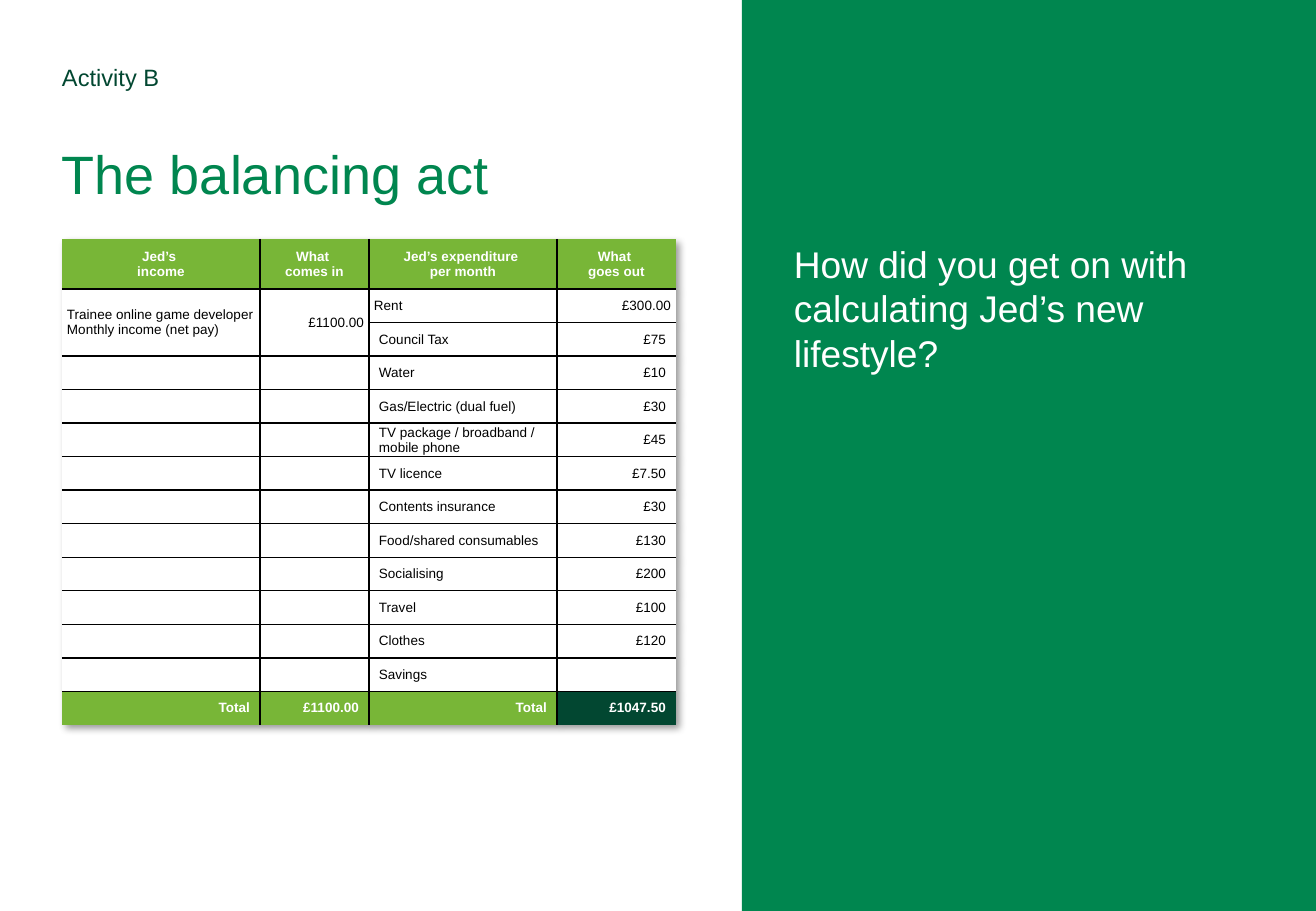
from dataclasses import dataclass
from lxml.etree import SubElement
from pptx import Presentation
from pptx.dml.color import RGBColor
from pptx.enum.shapes import MSO_SHAPE
from pptx.enum.text import MSO_ANCHOR, PP_ALIGN
from pptx.oxml import parse_xml
from pptx.oxml.ns import qn
from pptx.util import Pt

LABEL, TITLE = "Activity B", "The balancing act"
ASK = "How did you get on with calculating Jed’s new lifestyle?"
HEAD = ("Jed’s \vincome", "What \vcomes in",
        "Jed’s expenditure \vper month", "What \vgoes out")
INCOME = ("Trainee online game developer\nMonthly income (net pay)", "£1100.00")
COSTS = [
    ("Rent", "£300.00"),
    ("Council Tax", "£75"),
    ("Water", "£10"),
    ("Gas/Electric (dual fuel)", "£30"),
    ("TV package / broadband / mobile phone", "£45"),
    ("TV licence", "£7.50"),
    ("Contents insurance", "£30"),
    ("Food/shared consumables", "£130"),
    ("Socialising", "£200"),
    ("Travel", "£100"),
    ("Clothes", "£120"),
    ("Savings", ""),
]
TOTAL = ("Total", "£1100.00", "Total", "£1047.50")
ROWS = [HEAD, INCOME + COSTS[0], *[("", "") + cost for cost in COSTS[1:]], TOTAL]

SIZE = (1316, 911)
LEFT, TOP = 62, 239
COLS = (198, 109, 188, 119)
HEAD_H, BODY_H = 50, 436


@dataclass(frozen=True)
class Theme:
    font: str = "Arial"
    green: str = "00864F"
    dark: str = "024731"
    lime: str = "78B637"
    white: str = "FFFFFF"
    black: str = "000000"
    label: int = 14
    title: int = 32
    ask: int = 22
    cell: int = 8


THEME = Theme()
DRAW = 'xmlns:a="http://schemas.openxmlformats.org/drawingml/2006/main"'
PLAIN = "{2D5ABB26-0587-4C30-8999-92F81FD0307C}"
SHADOW = (f'<a:effectLst {DRAW}><a:outerShdw blurRad="50800" dist="38100" '
          'dir="2700000" algn="tl" rotWithShape="0"><a:srgbClr val="000000">'
          '<a:alpha val="40000"/></a:srgbClr></a:outerShdw></a:effectLst>')


def px(count):
    return round(count * 914400 / 121.5)


def paint(fill, color):
    fill.solid()
    fill.fore_color.rgb = RGBColor.from_string(color)


def style(para, size, color, bold=False):
    font = para.font
    font.name, font.size, font.bold = THEME.font, Pt(size), bold
    font.color.rgb = RGBColor.from_string(color)


def inset(box, left, top, right, bottom):
    box.margin_left, box.margin_top = px(left), px(top)
    box.margin_right, box.margin_bottom = px(right), px(bottom)


def rule(cell, sides):
    """Draw 1 pt lines on the given sides of a cell, in schema order."""
    props = cell._tc.get_or_add_tcPr()
    for spot, side in enumerate(sides):
        props.insert(spot, parse_xml(
            f'<a:ln{side} {DRAW} w="12700"><a:solidFill>'
            f'<a:srgbClr val="{THEME.black}"/></a:solidFill></a:ln{side}>'))


def add_heads(slide):
    box = slide.shapes.add_textbox(px(LEFT), px(63), px(445), px(158))
    frame = box.text_frame
    frame.word_wrap = True
    inset(frame, 0, 0, 0, 0)
    frame.text = f"{LABEL}\n{TITLE}"
    label, title = frame.paragraphs
    style(label, THEME.label, THEME.dark)
    style(title, THEME.title, THEME.green)
    title.space_before = Pt(29)


def add_panel(slide):
    left = 742
    panel = slide.shapes.add_shape(
        MSO_SHAPE.RECTANGLE, px(left), 0, px(SIZE[0] - left), px(SIZE[1]))
    panel.shadow.inherit = False
    paint(panel.fill, THEME.green)
    panel.line.fill.background()
    frame = panel.text_frame
    frame.word_wrap = True
    frame.vertical_anchor = MSO_ANCHOR.TOP
    inset(frame, 52, 241, 47, 62)
    frame.text = ASK
    para = frame.paragraphs[0]
    para.alignment = PP_ALIGN.LEFT
    para.line_spacing = Pt(26.4)
    style(para, THEME.ask, THEME.white)


def fill_cell(cell, text, row, col):
    last_row, last_col = len(ROWS) - 1, len(COLS) - 1
    edge = row in (0, last_row)
    if row == 0:
        align, pad = PP_ALIGN.CENTER, (0, 5, 0, 5)
    elif row == last_row:
        align, pad = PP_ALIGN.RIGHT, (10, 5, 10, 5)
    else:
        align = PP_ALIGN.RIGHT if col % 2 else PP_ALIGN.LEFT
        side = 5 if row == 1 else 10
        pad = (side, 0, side, 0)
    inset(cell, *pad)
    cell.vertical_anchor = MSO_ANCHOR.MIDDLE
    cell.text = text
    for para in cell.text_frame.paragraphs:
        para.alignment = align
        style(para, THEME.cell, THEME.white if edge else THEME.black, edge)
        if not text:
            SubElement(para._p, qn("a:endParaRPr")).set("sz", str(THEME.cell * 100))
    back = THEME.lime if edge else THEME.white
    if (row, col) == (last_row, last_col):
        back = THEME.dark
    paint(cell.fill, back)
    inner = {"L": col > 0, "R": col < last_col, "T": row > 0, "B": row < last_row}
    rule(cell, [side for side, shown in inner.items() if shown])


def add_budget(slide):
    table = slide.shapes.add_table(
        len(ROWS), len(COLS), px(LEFT), px(TOP),
        px(sum(COLS)), px(HEAD_H + BODY_H)).table
    props = table._tbl.tblPr
    props.find(qn("a:tableStyleId")).text = PLAIN
    props.insert(0, parse_xml(SHADOW))
    table.horz_banding = False
    for col, width in enumerate(COLS):
        table.columns[col].width = px(width)
    for row, texts in enumerate(ROWS):
        table.rows[row].height = px(BODY_H / (len(ROWS) - 1) if row else HEAD_H)
        for col, text in enumerate(texts):
            fill_cell(table.cell(row, col), text, row, col)
    for col in range(len(INCOME)):
        table.cell(1, col).merge(table.cell(2, col))


def main():
    deck = Presentation()
    deck.slide_width, deck.slide_height = map(px, SIZE)
    slide = deck.slides.add_slide(deck.slide_layouts[6])
    add_heads(slide)
    add_panel(slide)
    add_budget(slide)
    deck.save("out.pptx")


if __name__ == "__main__":
    main()
